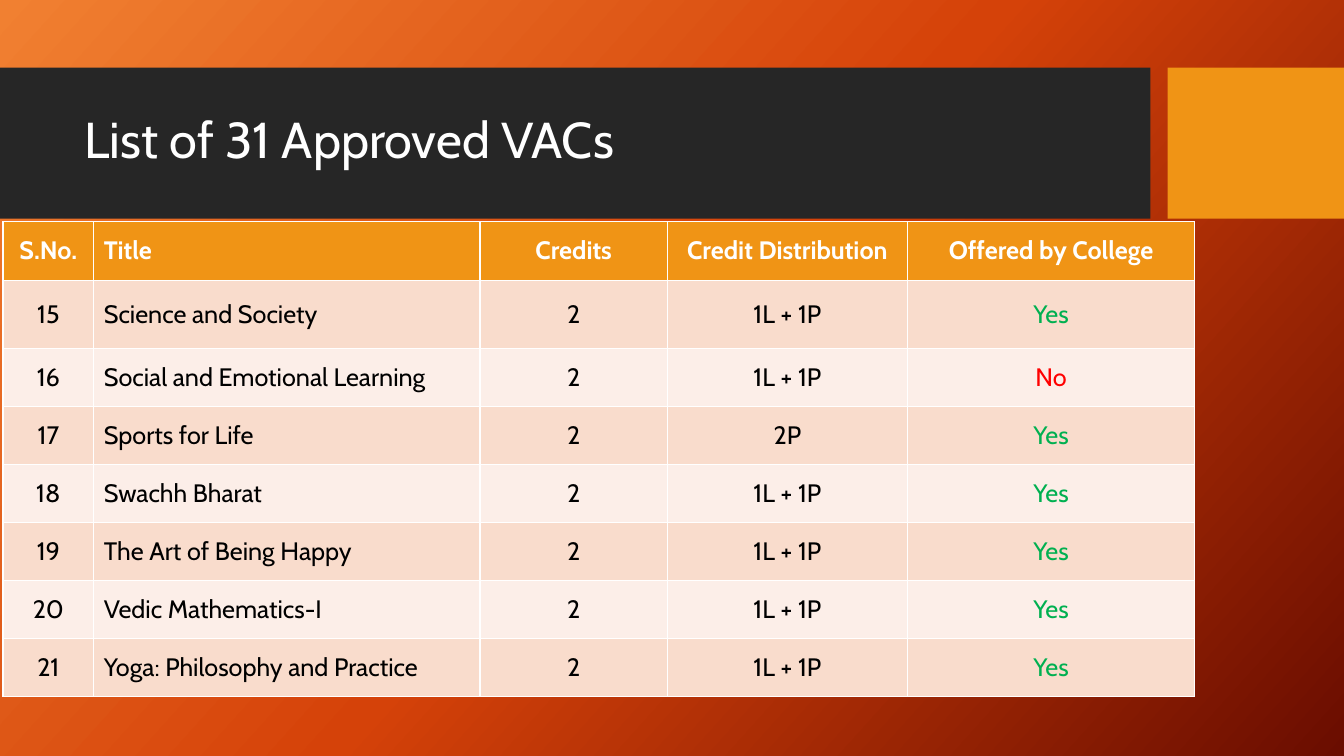
"""Build a slide with a table of approved value-added courses."""
from copy import deepcopy

from pptx import Presentation
from pptx.dml.color import RGBColor
from pptx.enum.shapes import MSO_SHAPE
from pptx.enum.text import MSO_ANCHOR, PP_ALIGN
from pptx.oxml.ns import qn
from pptx.util import Inches, Pt

FONT = "Cabin"
WHITE = RGBColor(0xFF, 0xFF, 0xFF)
BLACK = RGBColor(0x00, 0x00, 0x00)
CHARCOAL = RGBColor(0x26, 0x26, 0x26)
AMBER = RGBColor(0xF0, 0x94, 0x15)
PEACH = RGBColor(0xF9, 0xDC, 0xCC)
PALE_PEACH = RGBColor(0xFC, 0xEE, 0xE8)
GREEN = RGBColor(0x00, 0xB0, 0x50)
RED = RGBColor(0xFF, 0x00, 0x00)
GRADIENT = [
    (0, RGBColor(0xF1, 0x80, 0x31)),
    (0.5, RGBColor(0xD5, 0x42, 0x09)),
    (1, RGBColor(0x6A, 0x0D, 0x00)),
]

HEADERS = ["S.No.", "Title", "Credits", "Credit Distribution", "Offered by College"]
COURSES = [
    ("Science and Society", "1L + 1P", "Yes"),
    ("Social and Emotional Learning", "1L + 1P", "No"),
    ("Sports for Life", "2P", "Yes"),
    ("Swachh Bharat", "1L + 1P", "Yes"),
    ("The Art of Being Happy", "1L + 1P", "Yes"),
    ("Vedic Mathematics-I", "1L + 1P", "Yes"),
    ("Yoga: Philosophy and Practice", "1L + 1P", "Yes"),
]
FIRST_NUMBER = 15
COL_WIDTHS = [0.9, 3.83, 1.86, 2.38, 2.85]
ROW_HEIGHTS = [0.58, 0.68] + [0.575] * 6
ANSWER_COLORS = {"Yes": GREEN, "No": RED}

prs = Presentation()
prs.slide_width = Inches(13.33)
prs.slide_height = Inches(7.5)
s = prs.slides.add_slide(prs.slide_layouts[6])

fill = s.background.fill
fill.gradient()
fill.gradient_angle = 318
stops = next(s.element.iter(qn("a:gsLst")))
stops.append(deepcopy(stops[-1]))
for stop, (position, color) in zip(fill.gradient_stops, GRADIENT):
    stop.position = position
    stop.color.rgb = color

for left, width, color in [(0, 11.41, CHARCOAL), (11.58, 1.75, AMBER)]:
    sp = s.shapes.add_shape(
        MSO_SHAPE.RECTANGLE, Inches(left), Inches(0.67), Inches(width), Inches(1.5)
    )
    sp.shadow.inherit = False
    sp.fill.solid()
    sp.fill.fore_color.rgb = color
    sp.line.fill.background()

title = s.shapes.add_textbox(Inches(0.74), Inches(0.82), Inches(10.51), Inches(1.18))
tf = title.text_frame
tf.word_wrap = True
tf.vertical_anchor = MSO_ANCHOR.MIDDLE
p = tf.paragraphs[0]
p.text = "List of 31 Approved VACs"
p.line_spacing = 0.9
p.font.name = FONT
p.font.size = Pt(36)
p.font.color.rgb = WHITE

rows = [HEADERS]
for number, (name, distribution, offered) in enumerate(COURSES, FIRST_NUMBER):
    rows.append([str(number), name, "2", distribution, offered])

table = s.shapes.add_table(
    len(rows), len(HEADERS), Inches(0.03), Inches(2.2),
    Inches(sum(COL_WIDTHS)), Inches(sum(ROW_HEIGHTS)),
).table
for column, width in zip(table.columns, COL_WIDTHS):
    column.width = Inches(width)
for row, height in zip(table.rows, ROW_HEIGHTS):
    row.height = Inches(height)

for i, values in enumerate(rows):
    is_header = i == 0
    band = AMBER if is_header else PEACH if i % 2 else PALE_PEACH
    for j, value in enumerate(values):
        cell = table.cell(i, j)
        cell.fill.solid()
        cell.fill.fore_color.rgb = band
        cell.vertical_anchor = MSO_ANCHOR.MIDDLE
        p = cell.text_frame.paragraphs[0]
        p.text = value
        p.alignment = PP_ALIGN.LEFT if j == 1 else PP_ALIGN.CENTER
        p.font.name = FONT
        p.font.size = Pt(18)
        p.font.bold = is_header
        p.font.color.rgb = WHITE if is_header else ANSWER_COLORS.get(value, BLACK)

prs.save("out.pptx")
